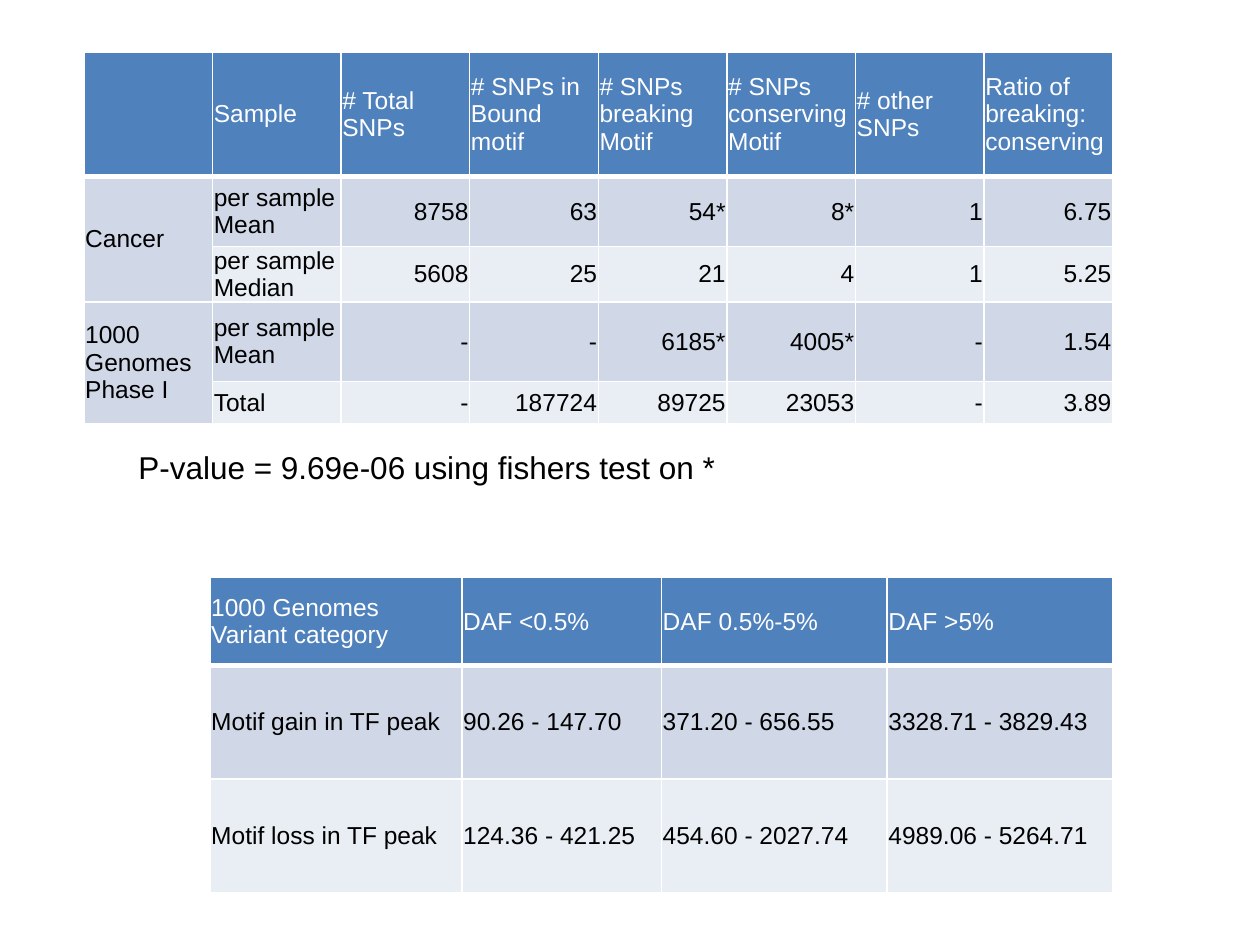
from dataclasses import dataclass

from lxml import etree
from pptx import Presentation
from pptx import util as u
from pptx.dml.color import RGBColor
from pptx.enum import text
from pptx.oxml.ns import qn


@dataclass(frozen=True)
class Theme:
    font: str = "Arial"
    cell: int = 14
    note: int = 18
    head: str = "4F81BD"
    odd: str = "D0D8E8"
    even: str = "E9EDF4"
    white: str = "FFFFFF"
    black: str = "000000"
    thin: int = 1
    thick: int = 3


THEME = Theme()
WIDE, HIGH = u.Inches(10), u.Inches(7.5)
COLS, ROWS = 60, 90

COUNTS = [
    ["", "Sample", "# Total SNPs", "# SNPs in Bound motif", "# SNPs breaking Motif",
     "# SNPs conserving Motif", "# other SNPs", "Ratio of breaking:\nconserving"],
    ["Cancer", "per sample\nMean", "8758", "63", "54*", "8*", "1", "6.75"],
    ["", "per sample\nMedian", "5608", "25", "21", "4", "1", "5.25"],
    ["1000 Genomes Phase I", "per sample\nMean", "-", "-", "6185*", "4005*", "-", "1.54"],
    ["", "Total", "-", "187724", "89725", "23053", "-", "3.89"],
]
RANGES = [
    ["1000 Genomes Variant category", "DAF <0.5%", "DAF 0.5%-5%", "DAF >5%"],
    ["Motif gain in TF peak", "90.26 - 147.70", "371.20 - 656.55", "3328.71 - 3829.43"],
    ["Motif loss in TF peak", "124.36 - 421.25", "454.60 - 2027.74", "4989.06 - 5264.71"],
]


def across(n):
    return int(WIDE * n / COLS)


def down(n):
    return int(HIGH * n / ROWS)


def style(frame, size, color, align=text.PP_ALIGN.LEFT):
    for para in frame.paragraphs:
        para.alignment = align
        for run in para.runs:
            run.font.name = THEME.font
            run.font.size = u.Pt(size)
            run.font.bold = False
            run.font.color.rgb = RGBColor.from_string(color)


def border(cell, row):
    props = cell._tc.get_or_add_tcPr()
    heavy = {0: "B", 1: "T"}.get(row)
    for side in "LRTB":
        width = THEME.thick if side == heavy else THEME.thin
        line = etree.SubElement(props, qn(f"a:ln{side}"), w=str(u.Pt(width)))
        fill = etree.SubElement(line, qn("a:solidFill"))
        etree.SubElement(fill, qn("a:srgbClr"), val=THEME.white)


def paint(cell, words, row, align):
    cell.text_frame.text = words
    cell.vertical_anchor = text.MSO_ANCHOR.MIDDLE
    cell.margin_left = cell.margin_right = u.Inches(0.01)
    cell.margin_top = cell.margin_bottom = 0
    border(cell, row)
    band = THEME.odd if row % 2 else THEME.even
    cell.fill.solid()
    cell.fill.fore_color.rgb = RGBColor.from_string(band if row else THEME.head)
    style(cell.text_frame, THEME.cell, THEME.black if row else THEME.white, align)


def grid(slide, data, left, top, widths, heights, right=None, spans=()):
    frame = slide.shapes.add_table(
        len(heights), len(widths), across(left), down(top),
        across(sum(widths)), down(sum(heights)))
    table = frame.table
    table.horz_banding = False
    for col, width in zip(table.columns, widths):
        col.width = across(width)
    for row, height in zip(table.rows, heights):
        row.height = down(height)
    for r, line in enumerate(data):
        for c, words in enumerate(line):
            flush = r and right is not None and c >= right
            align = text.PP_ALIGN.RIGHT if flush else text.PP_ALIGN.LEFT
            paint(table.cell(r, c), words, r, align)
    for first in spans:
        table.cell(first, 0).merge(table.cell(first + 1, 0))


def note(slide, words, left, top, width, height):
    box = slide.shapes.add_textbox(
        across(left), down(top), across(width), down(height))
    frame = box.text_frame
    frame.text = words
    frame.word_wrap = False
    frame.auto_size = text.MSO_AUTO_SIZE.SHAPE_TO_FIT_TEXT
    style(frame, THEME.note, THEME.black)


def main():
    deck = Presentation()
    deck.slide_width, deck.slide_height = WIDE, HIGH
    slide = deck.slides.add_slide(deck.slide_layouts[6])
    grid(slide, COUNTS, 4, 5, [49 / 8] * 8, [11.8, 6.7, 4, 7.6, 4],
         right=2, spans=(1, 3))
    grid(slide, RANGES, 10, 55, [12, 9.5, 10.75, 10.75], [8.4, 10.8, 10.8])
    note(slide, "P-value = 9.69e-06 using fishers test on *", 6, 42.1, 29, 4.8)
    deck.save("out.pptx")


if __name__ == "__main__":
    main()
